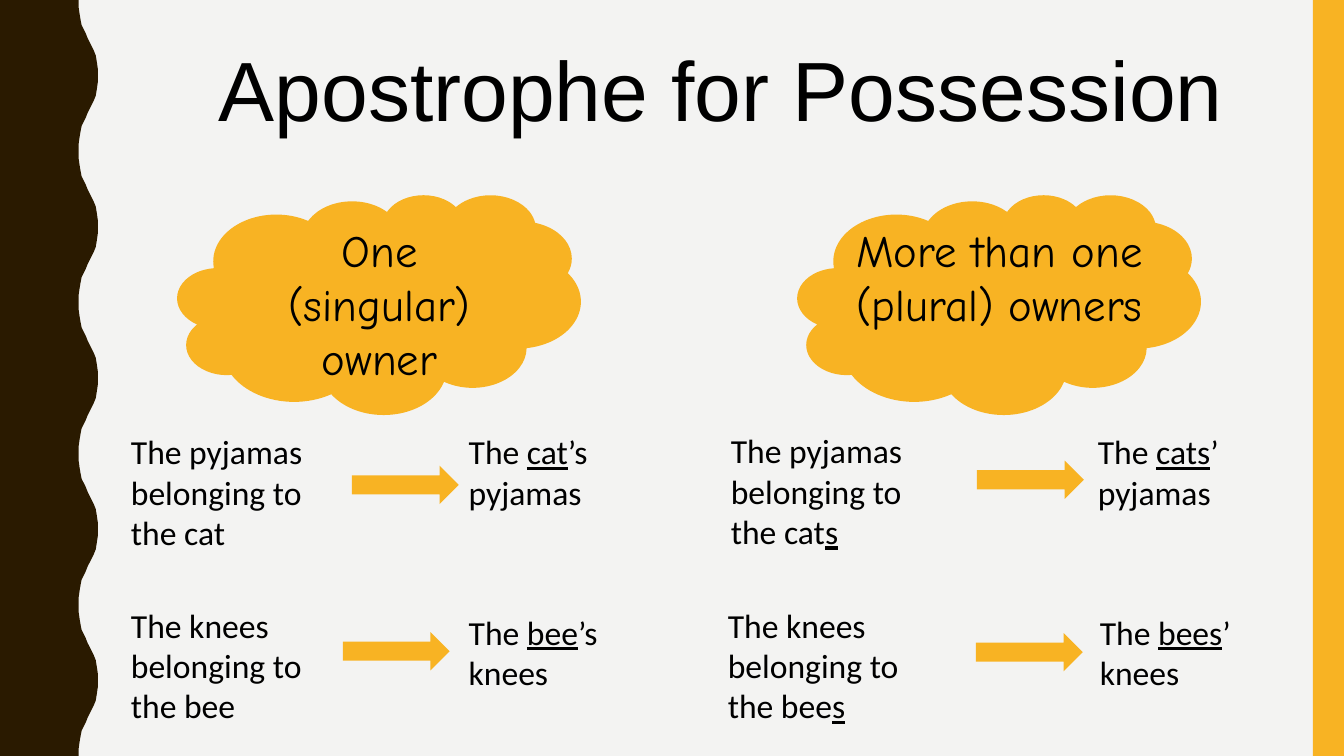
from pptx import Presentation
from pptx.dml.color import RGBColor
from pptx.enum.shapes import MSO_SHAPE
from pptx.enum.text import MSO_AUTO_SIZE, PP_ALIGN
from pptx.util import Inches, Pt

CLOUD, ARROW, RECT = MSO_SHAPE.CLOUD, MSO_SHAPE.RIGHT_ARROW, MSO_SHAPE.RECTANGLE
CENTER, LEFT = PP_ALIGN.CENTER, PP_ALIGN.LEFT
GROW = MSO_AUTO_SIZE.SHAPE_TO_FIT_TEXT

THEME = {
    "background": RGBColor(0xF3, 0xF3, 0xF2),
    "accent": RGBColor(0xF8, 0xB3, 0x23),
    "wave": RGBColor(0x2A, 0x1A, 0x00),
    "ink": RGBColor(0, 0, 0),
    "title": {"name": "Arial", "size": Pt(60)},
    "heading": {"name": "Comic Neue", "size": Pt(32)},
    "example": {"name": "Calibri", "size": Pt(24)},
}

# Boxes are left, top, width, height in inches; underscores enclose underlined letters.
TITLE = ("Apostrophe for Possession", (1.99, 0.32, 10.32, 1.11))
OWNERS = [
    {
        "heading": ("One (singular) owner", (2.35, 2.16, 2.83, 1.72)),
        "cloud_left": 1.76,
        "examples": [
            (("The pyjamas belonging to the cat", (1.2, 4.23, 2.28, 1.31)),
             (3.49, 4.62),
             ("The _cat_’s pyjamas", (4.55, 4.23, 2, 0.91))),
            (("The knees belonging to the bee", (1.2, 5.95, 1.92, 1.31)),
             (3.4, 6.27),
             ("The _bee_’s knees", (4.55, 6.02, 2, 0.91))),
        ],
    },
    {
        "heading": ("More than one (plural) owners", (8.3, 2.16, 3.23, 1.72)),
        "cloud_left": 7.91,
        "examples": [
            (("The pyjamas belonging to the cat_s_", (7.15, 4.22, 2.28, 1.31)),
             (9.69, 4.57),
             ("The _cats_’ pyjamas", (10.79, 4.23, 2, 0.91))),
            (("The knees belonging to the bee_s_", (7.12, 5.95, 2.28, 1.31)),
             (9.68, 6.28),
             ("The _bees_’ knees", (10.81, 6.02, 2, 0.91))),
        ],
    },
]

SLIDE_WIDTH, SLIDE_HEIGHT = 13.33, 7.5
STRIPE_WIDTH = 0.31
CLOUD_TOP, CLOUD_SIZE = 1.93, (4, 2.18)
ARROW_SIZE = (1.06, 0.38)
WAVE_PERIOD, WAVE_COUNT = 1.5, 5
# Trough to crest of one wave: (x, distance below the trough)
WAVE_RISE = [(0.78, 0), (0.78, 0.07), (0.79, 0.14), (0.8, 0.2), (0.81, 0.25),
             (0.83, 0.29), (0.85, 0.33), (0.87, 0.38), (0.89, 0.42), (0.91, 0.46),
             (0.93, 0.5), (0.95, 0.55), (0.96, 0.61), (0.97, 0.68), (0.97, 0.75)]


def paint(shape, color):
    shape.fill.solid()
    shape.fill.fore_color.rgb = color
    shape.line.fill.background()
    shape.shadow.inherit = False


def add_accent(slide, kind, box):
    paint(slide.shapes.add_shape(kind, *map(Inches, box)), THEME["accent"])


def add_wave(slide):
    wave_fall = [(x, WAVE_PERIOD - y) for x, y in reversed(WAVE_RISE[1:-1])]
    edge = [(x, y + crest * WAVE_PERIOD)
            for crest in range(WAVE_COUNT) for x, y in WAVE_RISE + wave_fall]
    outline = edge + [(WAVE_RISE[0][0], SLIDE_HEIGHT), (0, SLIDE_HEIGHT)]
    builder = slide.shapes.build_freeform(0, 0)
    builder.add_line_segments([(Inches(x), Inches(y)) for x, y in outline], close=True)
    paint(builder.convert_to_shape(), THEME["wave"])


def add_words(slide, words, box, style, align=LEFT):
    frame = slide.shapes.add_textbox(*map(Inches, box)).text_frame
    frame.word_wrap = True
    frame.auto_size = GROW
    paragraph = frame.paragraphs[0]
    paragraph.alignment = align
    for position, part in enumerate(words.split("_")):
        if not part:
            continue
        run = paragraph.add_run()
        run.text = part
        run.font.color.rgb = THEME["ink"]
        for attribute, value in {**THEME[style], "underline": position % 2 == 1}.items():
            setattr(run.font, attribute, value)


def main():
    deck = Presentation()
    deck.slide_width, deck.slide_height = Inches(SLIDE_WIDTH), Inches(SLIDE_HEIGHT)
    slide = deck.slides.add_slide(deck.slide_layouts[6])
    slide.background.fill.solid()
    slide.background.fill.fore_color.rgb = THEME["background"]

    add_wave(slide)
    add_accent(slide, RECT, (SLIDE_WIDTH - STRIPE_WIDTH, 0, STRIPE_WIDTH, SLIDE_HEIGHT))
    add_words(slide, *TITLE, "title", CENTER)
    for owner in OWNERS:
        add_accent(slide, CLOUD, (owner["cloud_left"], CLOUD_TOP, *CLOUD_SIZE))
        add_words(slide, *owner["heading"], "heading", CENTER)
        for long_form, arrow_corner, short_form in owner["examples"]:
            add_words(slide, *long_form, "example")
            add_accent(slide, ARROW, (*arrow_corner, *ARROW_SIZE))
            add_words(slide, *short_form, "example")
    deck.save("out.pptx")


if __name__ == "__main__":
    main()
